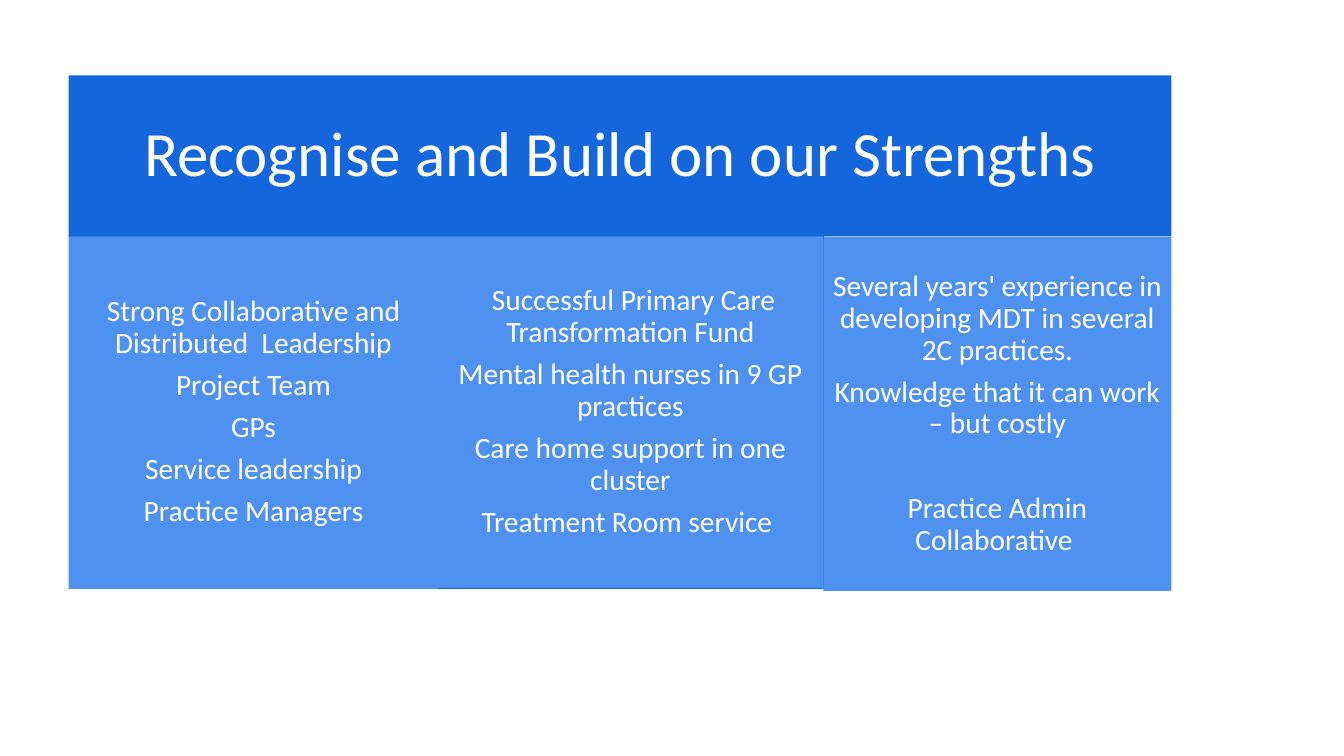
import pptx
import pptx.util
import pptx.dml.color
import pptx.enum.shapes
import pptx.enum.text

Cm = pptx.util.Cm
Pt = pptx.util.Pt
RGBColor = pptx.dml.color.RGBColor

WHITE = RGBColor(0xFF, 0xFF, 0xFF)
BLUE = RGBColor(0x13, 0x66, 0xDC)
LIGHT_BLUE = RGBColor(0x4E, 0x91, 0xF0)

LEFT, TOP, WIDTH = 1.73, 1.9, 27.79
HEADER_HEIGHT = 4.06
PANEL_TOP, PANEL_HEIGHT = 5.92, 8.92
LEADERSHIP_WIDTH, SERVICES_WIDTH = 9.29, 9.73
SERVICES_LEFT = LEFT + LEADERSHIP_WIDTH
EXPERIENCE_LEFT = SERVICES_LEFT + SERVICES_WIDTH
EXPERIENCE_WIDTH = LEFT + WIDTH - EXPERIENCE_LEFT

GAP = 7.3
WIDE_GAP = 37.7

LEADERSHIP = [
    ("Strong Collaborative and Distributed  Leadership", 0),
    ("Project Team", GAP),
    ("GPs", GAP),
    ("Service leadership", GAP),
    ("Practice Managers", GAP),
]
SERVICES = [
    (" Successful Primary Care Transformation Fund", 0),
    ("Mental health nurses in 9 GP practices", GAP),
    ("Care home support in one cluster", GAP),
    ("Treatment Room service ", GAP),
]
EXPERIENCE = [
    ("Several years' experience in developing MDT in several 2C practices.", 0),
    ("Knowledge that it can work – but costly", GAP),
    ("Practice Admin Collaborative ", WIDE_GAP),
]


class Deck:
    font = "Calibri"

    def __init__(self):
        self.prs = pptx.Presentation()
        self.prs.slide_width = Cm(33.87)
        self.prs.slide_height = Cm(19.05)
        self.s = self.prs.slides.add_slide(self.prs.slide_layouts[5])

    def add_text(self, sp, paragraphs, size, inset):
        tf = sp.text_frame
        tf.word_wrap = True
        tf.auto_size = pptx.enum.text.MSO_AUTO_SIZE.NONE
        tf.vertical_anchor = pptx.enum.text.MSO_ANCHOR.MIDDLE
        tf.margin_left = tf.margin_right = Cm(inset)
        tf.margin_top = tf.margin_bottom = Cm(inset)
        for i, (text, gap) in enumerate(paragraphs):
            p = tf.add_paragraph() if i else tf.paragraphs[0]
            p.alignment = pptx.enum.text.PP_ALIGN.CENTER
            p.line_spacing = 0.9
            p.space_before = Pt(gap)
            r = p.add_run()
            r.text = text
            r.font.name = self.font
            r.font.size = Pt(size)
            r.font.color.rgb = WHITE

    def title(self, text, left, top, width, height):
        sp = self.s.shapes.title
        sp.left, sp.top = Cm(left), Cm(top)
        sp.width, sp.height = Cm(width), Cm(height)
        sp.fill.solid()
        sp.fill.fore_color.rgb = BLUE
        self.add_text(sp, [(text, 0)], 45, 0.48)
        self.s.shapes.element.append(sp.element)

    def panel(self, paragraphs, left, top, width, line=None):
        sp = self.s.shapes.add_shape(
            pptx.enum.shapes.MSO_SHAPE.RECTANGLE,
            Cm(left), Cm(top), Cm(width), Cm(PANEL_HEIGHT))
        sp.shadow.inherit = False
        sp.fill.solid()
        sp.fill.fore_color.rgb = LIGHT_BLUE
        if line is None:
            sp.line.fill.background()
        else:
            sp.line.color.rgb = line
            sp.line.width = Pt(0.75)
        self.add_text(sp, paragraphs, 21, 0.22)

    def save(self):
        self.prs.save("out.pptx")


def main():
    deck = Deck()
    deck.panel(SERVICES, SERVICES_LEFT, PANEL_TOP, SERVICES_WIDTH, BLUE)
    deck.panel(LEADERSHIP, LEFT, PANEL_TOP, LEADERSHIP_WIDTH + 0.03)
    deck.title("Recognise and Build on our Strengths", LEFT, TOP, WIDTH, HEADER_HEIGHT)
    deck.panel(EXPERIENCE, EXPERIENCE_LEFT, PANEL_TOP + 0.05, EXPERIENCE_WIDTH)
    deck.save()


if __name__ == "__main__":
    main()
